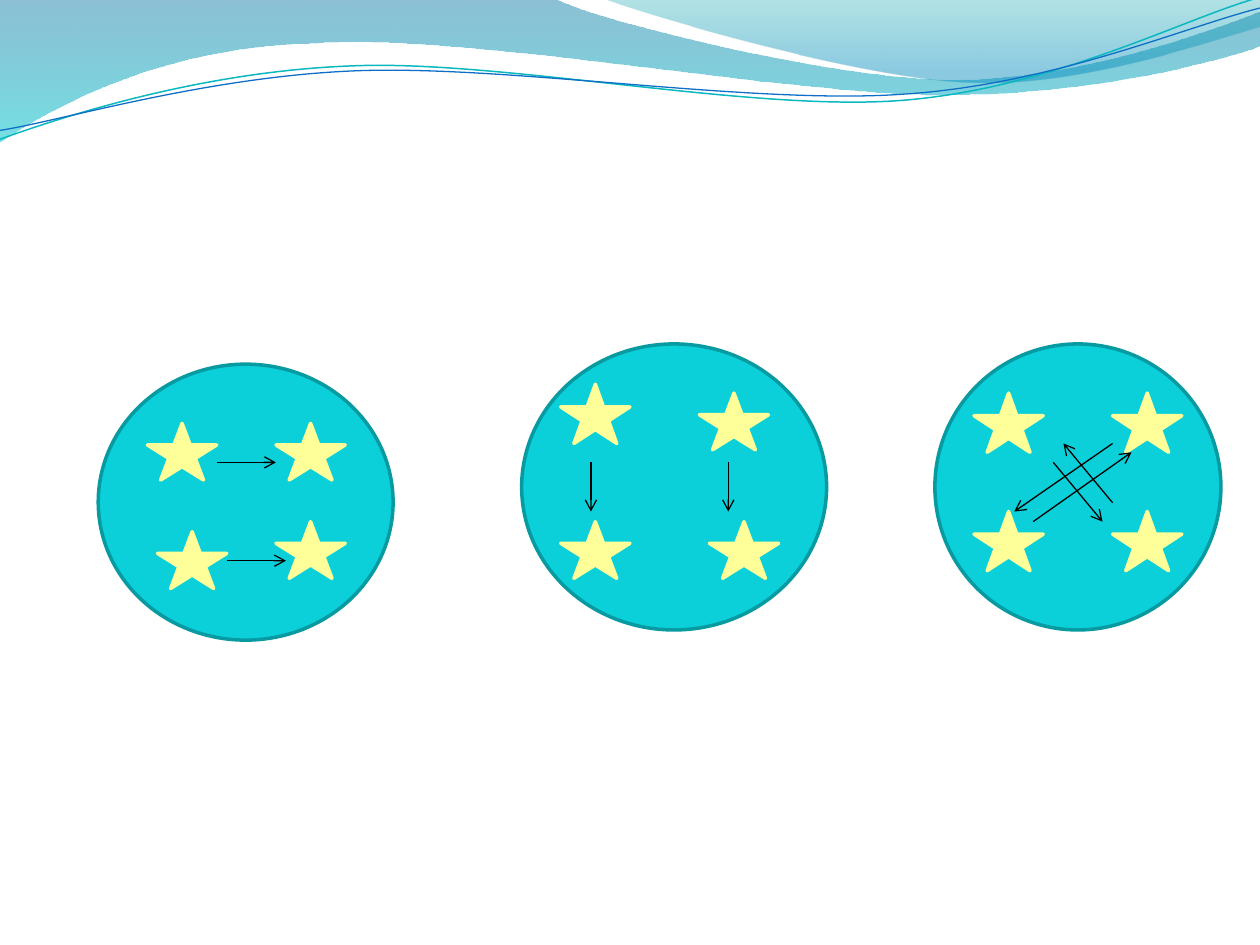
from dataclasses import dataclass

from pptx import Presentation
from pptx.dml.color import RGBColor
from pptx.enum.shapes import MSO_CONNECTOR, MSO_SHAPE
from pptx.oxml.ns import qn
from pptx.util import Inches, Pt
from lxml.etree import SubElement


@dataclass(frozen=True)
class Theme:
    disc: str = "0BD0D9"
    disc_edge: str = "089AA1"
    star: str = "FFFF99"
    arrow: str = "000000"
    teal_line: str = "0AB8BF"
    blue_line: str = "0F6FC6"
    # Gradient stops: position, colour, opacity in percent
    main_wave: tuple = ((0, "0074A1", 45), (1, "00C6CF", 55))
    corner_wave: tuple = ((0, "00A1A9", 30), (0.8, "008BBF", 45))
    edge_width: float = 2
    arrow_width: float = 0.75


THEME = Theme()
STAR_WIDTH = 0.55
LINE_TILT = -2.7

# Wave outlines: two numbers make a straight step, six make a Bezier curve
MAIN_WAVE = [
    (0, 0), (4.4, -0.01),
    (4.76, 0.17, 6.64, 0.63, 7.58, 0.63), (8.53, 0.63, 9.58, 0.26, 10, 0.09),
    (10.01, 0.36),
    (9.83, 0.44, 8.7, 0.76, 7.46, 0.75), (6.22, 0.75, 3.82, 0.28, 2.57, 0.34),
    (1.29, 0.36, 0.46, 0.83, -0.01, 1.13), (0, 0),
]
CORNER_WAVE = [
    (0, 0), (0.3, 0.12, 2.03, 0.63, 2.9, 0.66),
    (3.77, 0.7, 4.82, 0.33, 5.21, 0.22), (5.21, 0.01), (0, 0),
]
# Lines before they are tilted
TEAL_LINE = [
    (-0.02, 0.87), (0.47, 0.72, 1.58, 0.41, 2.78, 0.42),
    (3.96, 0.42, 5.91, 0.93, 7.12, 0.9), (8.32, 0.87, 9.4, 0.36, 10, 0.22),
]
BLUE_LINE = [
    (-0.02, 0.8), (0.46, 0.75, 1.64, 0.45, 2.83, 0.46),
    (4.04, 0.47, 5.96, 0.88, 7.16, 0.85), (8.35, 0.83, 9.42, 0.42, 10.02, 0.3),
]

# Discs: box, stars (left, top, height) and arrows (start, end), inside the box
DISCS = [
    ((0.78, 2.89, 2.34, 2.19),
     [(0.39, 0.47, 0.45), (1.41, 0.47, 0.45), (0.47, 1.33, 0.45), (1.41, 1.25, 0.45)],
     [(0.94, 0.78, 1.41, 0.78), (1.02, 1.56, 1.49, 1.56)]),
    ((4.14, 2.73, 2.42, 2.27),
     [(0.31, 0.32, 0.47), (0.31, 1.41, 0.45), (1.41, 0.39, 0.45), (1.49, 1.41, 0.45)],
     [(0.55, 0.94, 0.55, 1.33), (1.64, 0.94, 1.64, 1.33)]),
    ((7.42, 2.73, 2.27, 2.27),
     [(left, top, 0.47) for left in (0.31, 1.41) for top in (0.39, 1.33)],
     [(0.94, 0.94, 1.33, 1.41), (1.41, 1.26, 1.02, 0.79),
      (0.78, 1.41, 1.56, 0.86), (1.41, 0.79, 0.63, 1.33)]),
]


def set_line(line, color, width):
    line.color.rgb = RGBColor.from_string(color)
    line.width = Pt(width)


def add_outline(shapes, outline, left, top, close):
    """Draw straight steps through all points, then bend the curved ones."""
    points = [(Inches(left + step[i]), Inches(top + step[i + 1]))
              for step in outline for i in range(0, len(step), 2)]
    builder = shapes.build_freeform(*points[0])
    builder.add_line_segments(points[1:], close=close)
    shape = builder.convert_to_shape()
    shape.shadow.inherit = False
    segments = iter(list(shape._element.iter(qn("a:lnTo"))))
    for step in outline[1:]:
        parts = [next(segments) for _ in range(len(step) // 2)]
        if len(parts) == 3:
            curve = parts[0]
            for part in parts[1:]:
                curve.append(part[0])
                part.getparent().remove(part)
            curve.tag = qn("a:cubicBezTo")
    return shape


def add_wave(page, outline, left, top, stops):
    wave = add_outline(page.shapes, outline, left, top, close=True)
    wave.fill.gradient()
    wave.fill.gradient_angle = 270
    for stop, (position, color, _) in zip(wave.fill.gradient_stops, stops):
        stop.position = position
        stop.color.rgb = RGBColor.from_string(color)
    # Opacity of each gradient stop
    for node, (_, _, opacity) in zip(wave._element.spPr.iter(qn("a:srgbClr")), stops):
        SubElement(node, qn("a:alpha")).set("val", str(opacity * 1000))
    wave.line.fill.background()


def add_header(page, left, top):
    add_wave(page, MAIN_WAVE, left, top, THEME.main_wave)
    add_wave(page, CORNER_WAVE, left + 4.79, top - 0.01, THEME.corner_wave)
    lines = page.shapes.add_group_shape()
    for outline, color, width in ((TEAL_LINE, THEME.teal_line, 0.85),
                                  (BLUE_LINE, THEME.blue_line, 0.75)):
        curve = add_outline(lines.shapes, outline, left, top, close=False)
        curve.rotation = LINE_TILT
        curve.fill.background()
        set_line(curve.line, color, width)


def add_solid(page, kind, box, fill, edge):
    shape = page.shapes.add_shape(kind, *map(Inches, box))
    shape.shadow.inherit = False
    shape.fill.solid()
    shape.fill.fore_color.rgb = RGBColor.from_string(fill)
    set_line(shape.line, edge, THEME.edge_width)


def add_arrow(page, ends):
    arrow = page.shapes.add_connector(MSO_CONNECTOR.STRAIGHT, *map(Inches, ends))
    set_line(arrow.line, THEME.arrow, THEME.arrow_width)
    SubElement(arrow.line._get_or_add_ln(), qn("a:tailEnd")).set("type", "arrow")
    SubElement(arrow._element.spPr, qn("a:effectLst"))


def add_disc(page, box, stars, arrows):
    left, top = box[:2]
    add_solid(page, MSO_SHAPE.OVAL, box, THEME.disc, THEME.disc_edge)
    for x, y, height in stars:
        add_solid(page, MSO_SHAPE.STAR_5_POINT, (left + x, top + y, STAR_WIDTH, height),
                  THEME.star, THEME.star)
    for x1, y1, x2, y2 in arrows:
        add_arrow(page, (left + x1, top + y1, left + x2, top + y2))


def main():
    deck = Presentation()
    deck.slide_width, deck.slide_height = Inches(10), Inches(7.5)
    page = deck.slides.add_slide(deck.slide_layouts[6])
    add_header(page, 0, 0)
    for box, stars, arrows in DISCS:
        add_disc(page, box, stars, arrows)
    deck.save("out.pptx")


if __name__ == "__main__":
    main()
